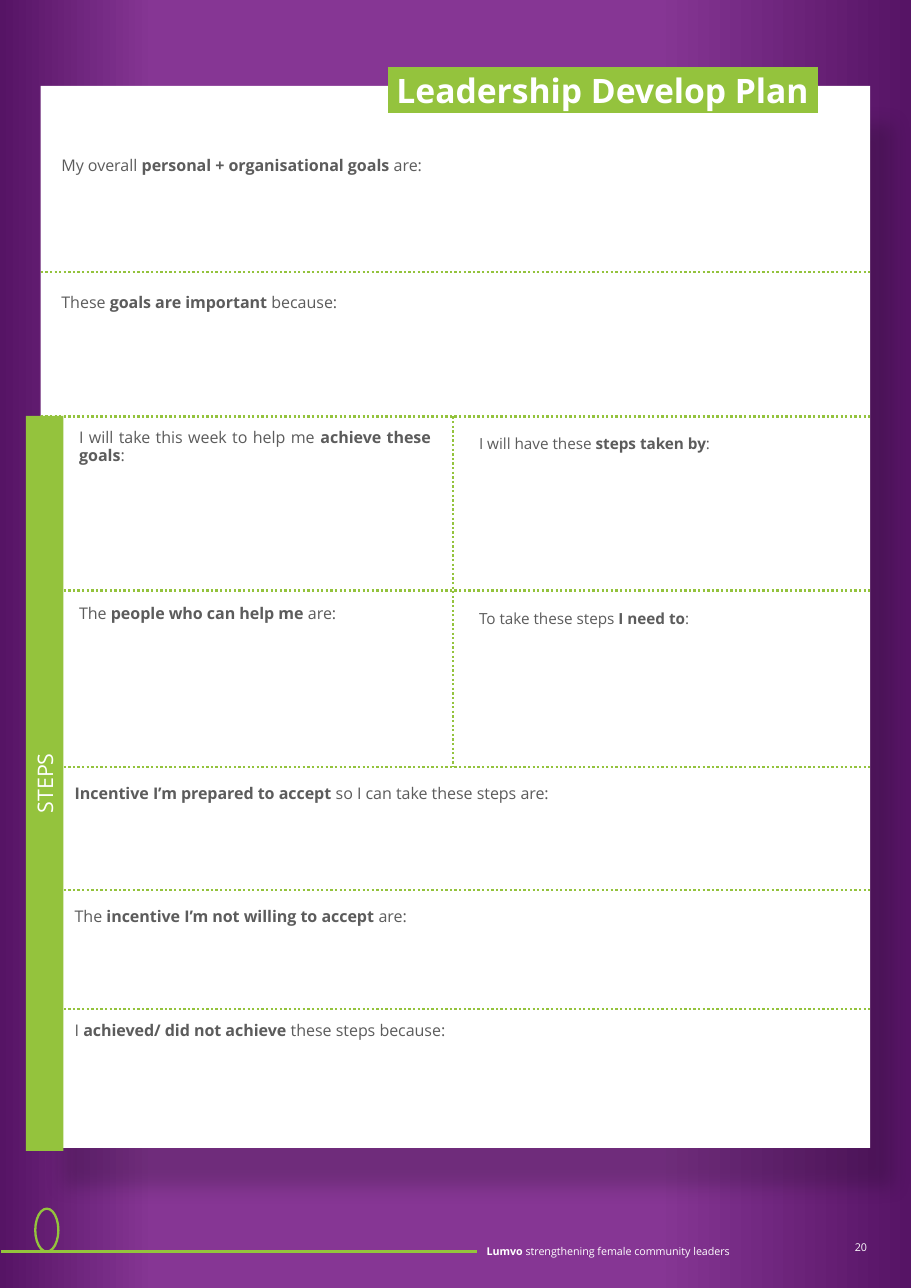
"""Build the one-page Leadership Develop Plan worksheet."""
from lxml import etree
from pptx import Presentation
from pptx.dml.color import RGBColor
from pptx.enum.dml import MSO_LINE
from pptx.enum.shapes import MSO_CONNECTOR, MSO_SHAPE
from pptx.enum.text import MSO_ANCHOR, MSO_AUTO_SIZE, PP_ALIGN
from pptx.oxml import parse_xml
from pptx.oxml.ns import nsdecls, qn
from pptx.util import Inches, Pt

GREEN = RGBColor(0x94, 0xC3, 0x3D)
GREY = RGBColor(0x5C, 0x5C, 0x5C)
WHITE = RGBColor(0xFF, 0xFF, 0xFF)
PURPLE = RGBColor(0x86, 0x36, 0x94)
DARK_PURPLE = RGBColor(0x56, 0x14, 0x65)
FONT = "Open Sans"
TOP, MIDDLE = MSO_ANCHOR.TOP, MSO_ANCHOR.MIDDLE
LEFT, CENTER, RIGHT, JUSTIFY = PP_ALIGN.LEFT, PP_ALIGN.CENTER, PP_ALIGN.RIGHT, PP_ALIGN.JUSTIFY
NO_AUTOFIT = MSO_AUTO_SIZE.NONE
STRAIGHT = MSO_CONNECTOR.STRAIGHT
DOTTED = MSO_LINE.ROUND_DOT
RECTANGLE, OVAL = MSO_SHAPE.RECTANGLE, MSO_SHAPE.OVAL

PANEL_LEFT, PANEL_RIGHT = 0.37, 7.9
ROW_LINES = [2.47, 3.78, 5.36, 6.96, 8.08, 9.16]

prs = Presentation()
prs.slide_width, prs.slide_height = Inches(8.27), Inches(11.69)
s = prs.slides.add_slide(prs.slide_layouts[5])


def write(text, at, sp=None, size=10.5, color=GREY, align=JUSTIFY, anchor=TOP, spacing=None):
    """Set text in a box, with **marked** parts in bold."""
    left, top, width, height = (Inches(v) for v in at)
    if sp is None:
        sp = s.shapes.add_textbox(left, top, width, height)
    sp.left, sp.top, sp.width, sp.height = left, top, width, height
    tf = sp.text_frame
    tf.word_wrap, tf.auto_size, tf.vertical_anchor = True, NO_AUTOFIT, anchor
    p = tf.paragraphs[0]
    p.alignment = align
    if spacing:
        p.line_spacing = Pt(spacing)
    for i, part in enumerate(text.split("**")):
        if part:
            r = p.add_run()
            r.text = part
            r.font.name, r.font.size, r.font.bold = FONT, Pt(size), i % 2 == 1
            r.font.color.rgb = color
    return sp


def add_line(x1, y1, x2, y2, dash=None):
    """Draw a straight green line."""
    line = s.shapes.add_connector(STRAIGHT, Inches(x1), Inches(y1), Inches(x2), Inches(y2))
    line.line.color.rgb, line.line.width = GREEN, Pt(1.5)
    if dash:
        line.line.dash_style = dash
    etree.SubElement(line._element.spPr, qn("a:effectLst"))


backdrop = s.shapes.add_shape(RECTANGLE, 0, 0, prs.slide_width, prs.slide_height)
backdrop.shadow.inherit = False
backdrop.line.fill.background()
backdrop.fill.gradient()
backdrop.fill.gradient_angle = 0
stops = backdrop._element.spPr.find(qn("a:gradFill")).find(qn("a:gsLst"))
stops.clear()
for position, color in [(0, DARK_PURPLE), (17, PURPLE), (72, PURPLE), (100, DARK_PURPLE)]:
    stop = etree.SubElement(stops, qn("a:gs"), pos=str(position * 1000))
    etree.SubElement(stop, qn("a:srgbClr"), val=str(color))

panel = s.shapes.add_shape(RECTANGLE, Inches(PANEL_LEFT), Inches(0.78),
                           Inches(PANEL_RIGHT - PANEL_LEFT), Inches(9.64))
panel.fill.solid()
panel.fill.fore_color.rgb = WHITE
panel.line.fill.background()
panel._element.spPr.append(parse_xml(
    f'<a:effectLst {nsdecls("a")}><a:outerShdw blurRad="{Pt(12.7)}" dist="{Pt(29.5)}" '
    f'dir="{59 * 60000}" algn="tl" rotWithShape="0"><a:srgbClr val="000000">'
    '<a:alpha val="17000"/></a:srgbClr></a:outerShdw></a:effectLst>'))

write("**Lumvo** strengthening female community leaders", (4.32, 11.15, 3.24, 0.41),
      size=7, color=WHITE, align=LEFT, anchor=MIDDLE)
write("20", (6.15, 11.01, 1.82, 0.62), size=7, color=WHITE, align=RIGHT, anchor=MIDDLE)
add_line(0.01, 11.36, 4.33, 11.36)
emblem = s.shapes.add_shape(OVAL, Inches(0.32), Inches(10.97), Inches(0.21), Inches(0.39))
emblem.shadow.inherit = False
emblem.fill.background()
emblem.line.color.rgb, emblem.line.width = GREEN, Pt(1.5)

title = write("** Leadership Develop Plan**.", (3.42, 0.61, 4.85, 0.91), sp=s.shapes.title,
              size=22, color=WHITE, spacing=24.4)
title_runs = title.text_frame.paragraphs[0].runs
title_runs[-1].font.bold = True
title_runs[-1].font.color.rgb = GREEN
for r in title_runs:
    highlight = parse_xml(f'<a:highlight {nsdecls("a")}><a:srgbClr val="{GREEN}"/></a:highlight>')
    r.font._element.find(qn("a:solidFill")).addnext(highlight)
s.shapes._spTree.append(title._element)

PROMPTS = [
    ("My overall **personal + organisational goals **are: ", 0.46, 1.37, 6.96, 10.5),
    ("These **goals are important **because: ", 0.46, 2.61, 6.96, 10.5),
    ("I will take this week to help me **achieve these goals**: ", 0.62, 3.84, 3.39, 10.5),
    ("I will have these **steps taken by**: ", 4.25, 3.89, 3.02, 10),
    ("The **people who can help me **are: ", 0.62, 5.44, 2.95, 10.5),
    ("To take these steps **I need to**: ", 4.25, 5.48, 3.02, 10),
    ("**Incentive I’m prepared to accept **so I can take these steps are: ", 0.58, 7.07, 6.96, 10.5),
    ("The **incentive I’m not willing to accept **are: ", 0.58, 8.19, 6.96, 10.5),
    ("I **achieved/ did not achieve **these steps because: ", 0.58, 9.22, 6.96, 10.5),
]
for text, left, top, width, size in PROMPTS:
    write(text, (left, top, width, 0.5), size=size, spacing=12)

for y in ROW_LINES:
    add_line(PANEL_LEFT, y, PANEL_RIGHT, y, dash=DOTTED)
add_line(4.11, ROW_LINES[1], 4.11, ROW_LINES[3], dash=DOTTED)

steps = write("STEPS", (-2.93, 6.94, 6.67, 0.34), size=14, color=WHITE, align=CENTER, anchor=MIDDLE)
steps.rotation = 270
steps.fill.solid()
steps.fill.fore_color.rgb = GREEN

prs.save("out.pptx")
